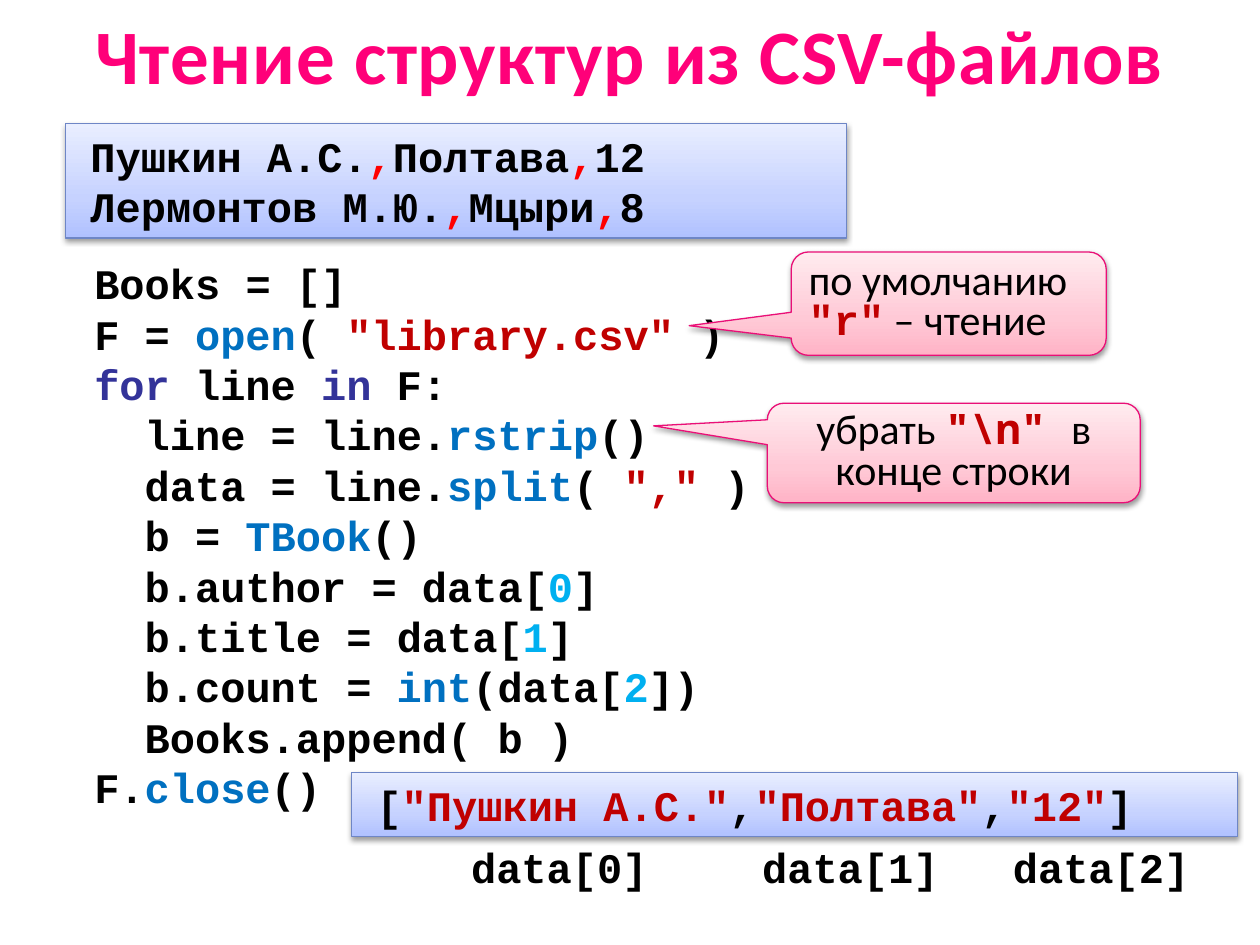
from copy import deepcopy

from lxml.etree import SubElement
from pptx import Presentation
from pptx.dml.color import RGBColor
from pptx.enum.shapes import MSO_SHAPE as Shape
from pptx.enum.text import MSO_ANCHOR as Anchor, MSO_AUTO_SIZE as AutoSize, PP_ALIGN as Align
from pptx.oxml.ns import qn
from pptx.util import Pt

BLACK = RGBColor(0x00, 0x00, 0x00)
RED = RGBColor(0xFF, 0x00, 0x00)
STRING = RGBColor(0xC0, 0x00, 0x00)
FUNCTION = RGBColor(0x00, 0x70, 0xC0)
KEYWORD = RGBColor(0x33, 0x33, 0x99)
NUMBER = RGBColor(0x00, 0xB0, 0xF0)
PINK = RGBColor(0xFF, 0x00, 0x79)
DARK_PINK = RGBColor(0xB4, 0x00, 0x55)
BLUE_LINE = RGBColor(0x6E, 0x86, 0xC6)
PINK_LINE = RGBColor(0xEA, 0x0F, 0x77)
BLUE_STOPS = (RGBColor(0xB0, 0xC1, 0xFF), RGBColor(0xC6, 0xD2, 0xFF), RGBColor(0xE9, 0xEE, 0xFF))
PINK_STOPS = (RGBColor(0xFF, 0xB3, 0xC6), RGBColor(0xFF, 0xC9, 0xD6), RGBColor(0xFF, 0xEB, 0xEF))
PROSE, CODE, MONO = "Calibri", "Courier New", "Noto Sans Mono"

COMMA = (",", RED)
RECORDS = [
    ["Пушкин А.С.", COMMA, "Полтава", COMMA, "12"],
    ["Лермонтов М.Ю.", COMMA, "Мцыри", COMMA, "8"],
]
PROGRAM = [
    ["Books = []"],
    ["F = ", ("open", FUNCTION), "( ", ('"library.csv" ', STRING), ")"],
    [("for", KEYWORD), " line ", ("in", KEYWORD), " F:"],
    ["  line = line.", ("rstrip", FUNCTION), "()"],
    ["  data = line.", ("split", FUNCTION), "( ", ('","', STRING), " )"],
    ["  b = ", ("TBook", FUNCTION), "()"],
    ["  b.author = data[", ("0", NUMBER), "]"],
    ["  b.title = data[", ("1", NUMBER), "]"],
    ["  b.count = ", ("int", FUNCTION), "(data[", ("2", NUMBER), "])"],
    ["  Books.append( b )"],
    ["F.", ("close", FUNCTION), "()"],
]
FIELDS = [[
    "[", ('"Пушкин А.С."', STRING), ",", ('"Полтава"', STRING), ",", ('"12"', STRING), "]",
]]
MODE_NOTE = [["по умолчанию"], [('"r"', STRING, CODE), " – чтение"]]
STRIP_NOTE = [["убрать ", ('"\\n" ', STRING, MONO), "в конце строки"]]


class SlideBuilder:
    """Holds the text style and the current slide, and adds each kind of element."""

    size = Pt(24)

    def __init__(self, slide):
        self.slide = slide
        self.shapes = slide.shapes

    def start_group(self):
        self.shapes = self.slide.shapes.add_group_shape().shapes

    def title(self, text):
        shape = self.slide.shapes.title
        shape.left, shape.top, shape.width, shape.height = Pt(0), Pt(0), Pt(720), Pt(61.2)
        frame = shape.text_frame
        frame.text = text
        frame.vertical_anchor = Anchor.MIDDLE
        paragraph = frame.paragraphs[0]
        paragraph.alignment = Align.CENTER
        font = paragraph.runs[0].font
        font.name, font.size, font.bold = PROSE, Pt(44), True
        font.fill.gradient()
        font.fill.gradient_angle = 270
        for stop, color, position in zip(font.fill.gradient_stops, (PINK, DARK_PINK), (0.25, 1)):
            stop.color.rgb, stop.position = color, position
        paragraph.runs[0]._r.get_or_add_rPr().set("spc", "50")

    def fill_text(self, shape, lines, font=CODE, align=Align.LEFT, spacing=None,
                  margin=0, indent=0, wrap=True, grow=True, anchor=Anchor.MIDDLE):
        frame = shape.text_frame
        frame.word_wrap = wrap
        frame.auto_size = AutoSize.SHAPE_TO_FIT_TEXT if grow else AutoSize.NONE
        frame.vertical_anchor = anchor
        for number, pieces in enumerate(lines):
            paragraph = frame.add_paragraph() if number else frame.paragraphs[0]
            paragraph.alignment = align
            paragraph.line_spacing = spacing
            properties = paragraph._p.get_or_add_pPr()
            properties.set("marL", str(Pt(margin)))
            properties.set("indent", str(Pt(indent)))
            for piece in pieces:
                self.add_piece(paragraph, font, *([piece] if isinstance(piece, str) else piece))

    def add_piece(self, paragraph, default_font, text, color=BLACK, name=None):
        run = paragraph.add_run()
        run.text = text
        run.font.name = name or default_font
        run.font.size = self.size
        run.font.bold = run.font.name != PROSE
        run.font.color.rgb = color

    def panel(self, kind, box, stops, line):
        shape = self.shapes.add_shape(kind, *map(Pt, box))
        shape.fill.gradient()
        stop_list = shape._element.spPr.find(".//" + qn("a:gsLst"))
        stop_list.insert(1, deepcopy(stop_list[0]))
        for stop, color, position in zip(shape.fill.gradient_stops, stops, (0, 0.35, 1)):
            stop.color.rgb, stop.position = color, position
        shape.fill.gradient_angle = 90
        shape.line.color.rgb = line
        shape.line.width = Pt(0.75)
        shape.shadow.inherit = False
        effects = shape._element.spPr.find(qn("a:effectLst"))
        shadow = SubElement(effects, qn("a:outerShdw"), blurRad=str(Pt(3.1)),
                            dist=str(Pt(1.6)), dir="5400000", rotWithShape="0")
        color = SubElement(shadow, qn("a:srgbClr"), val=str(BLACK))
        SubElement(color, qn("a:alpha"), val="38000")
        return shape

    def data_box(self, box, lines):
        shape = self.panel(Shape.RECTANGLE, box, BLUE_STOPS, BLUE_LINE)
        self.fill_text(shape, lines, align=Align.JUSTIFY, indent=7.2)

    def callout(self, box, tip, lines, align):
        shape = self.panel(Shape.ROUNDED_RECTANGULAR_CALLOUT, box, PINK_STOPS, PINK_LINE)
        for index, value in enumerate((*tip, 0.167)):
            shape.adjustments[index] = value
        self.fill_text(shape, lines, font=PROSE, align=align, spacing=0.8, grow=False)

    def code(self, box, lines):
        shape = self.shapes.add_textbox(*map(Pt, box))
        self.fill_text(shape, lines, align=Align.JUSTIFY, margin=14.4, indent=-7.2)

    def label(self, box, text):
        shape = self.shapes.add_textbox(*map(Pt, box))
        self.fill_text(shape, [[text]], wrap=False, anchor=Anchor.TOP)


def main():
    presentation = Presentation()
    presentation.slide_width, presentation.slide_height = Pt(720), Pt(540)
    builder = SlideBuilder(presentation.slides.add_slide(presentation.slide_layouts[5]))
    builder.title("Чтение структур из CSV-файлов")
    builder.data_box((37.44, 70.56, 446.4, 65.52), RECORDS)
    builder.code((39.6, 141.84, 494.64, 327.6), PROGRAM)
    builder.callout((452.16, 144, 180, 59.04), (-0.824, 0.213), MODE_NOTE, Align.LEFT)
    builder.callout((438.48, 230.4, 213.12, 56.88), (-0.805, -0.272), STRIP_NOTE, Align.CENTER)
    builder.start_group()
    builder.data_box((200.88, 441.36, 506.16, 36.72), FIELDS)
    for index, left in enumerate((262.08, 428.4, 571.68)):
        builder.label((left, 477.36, 115.92, 36), f"data[{index}]")
    presentation.save("out.pptx")


if __name__ == "__main__":
    main()
